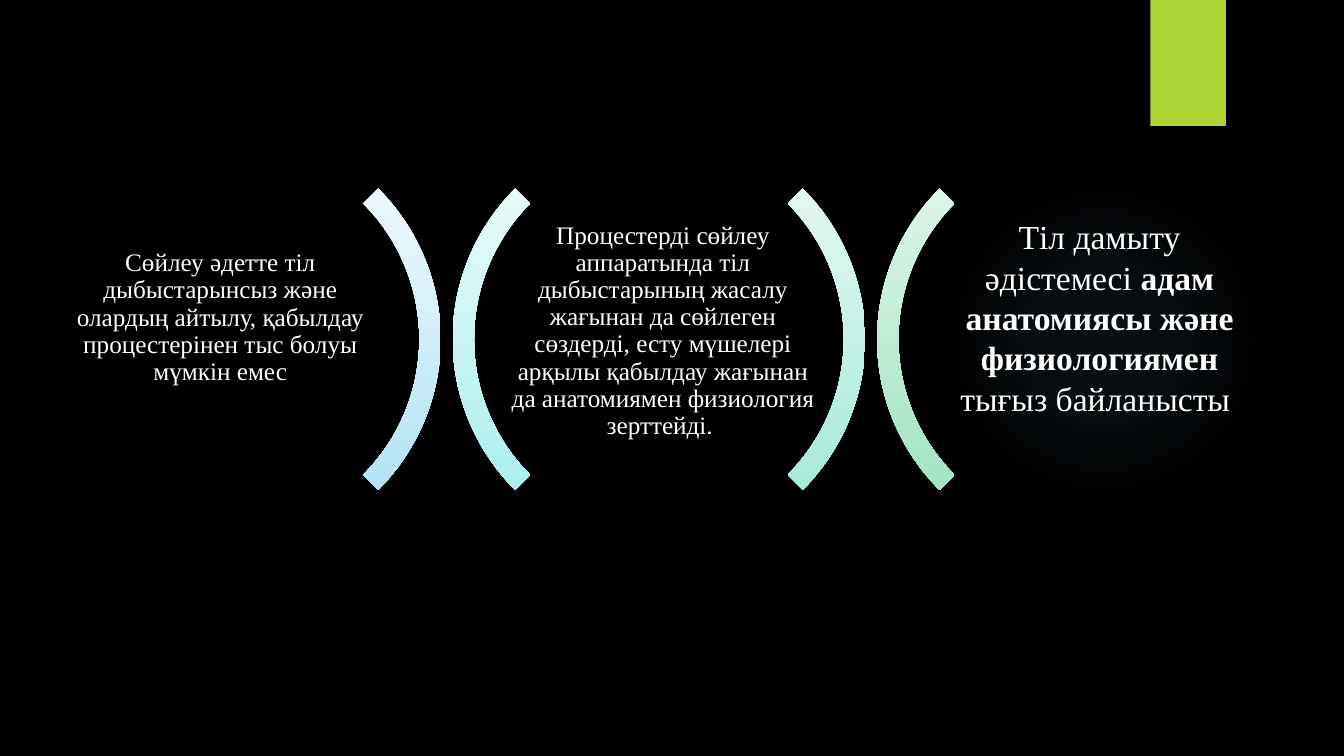
from lxml.etree import SubElement
from pptx import Presentation
from pptx.dml.color import RGBColor
from pptx.enum.shapes import MSO_SHAPE
from pptx.enum.text import MSO_ANCHOR, PP_ALIGN
from pptx.oxml.ns import qn
from pptx.util import Inches, Pt

BLACK = RGBColor(0x00, 0x00, 0x00)
WHITE = RGBColor(0xFF, 0xFF, 0xFF)
LIME = RGBColor(0xAC, 0xD4, 0x33)
SKY = RGBColor(0x7A, 0xC4, 0xF0)
FONT = "Times New Roman"

# Content: one entry per column, runs are (text, bold)
COLUMNS = [
    dict(box=(0.58, 2.73, 3.21, 0.85), size=18, spacing=0.9, inset=0.07, bottom=0.07,
         runs=[("Сөйлеу әдетте тіл дыбыстарынсыз және олардың айтылу, "
                "қабылдау процестерінен тыс болуы мүмкін емес", False)]),
    dict(box=(4.97, 2.86, 3.21, 0.85), size=18, spacing=0.9, inset=0.07, bottom=0.07,
         runs=[("Процестерді сөйлеу аппаратында тіл дыбыстарының жасалу жағынан "
                "да сөйлеген сөздерді, есту мүшелері арқылы қабылдау жағынан да "
                "анатомиямен физиология зерттейді. ", False)]),
    dict(box=(9.3, 2.34, 3.21, 2.11), size=24, spacing=1.0, inset=0.1, bottom=0.6,
         runs=[("Тіл дамыту әдістемесі ", False),
               ("адам анатомиясы және физиологиямен ", True),
               ("тығыз байланысты ", False)]),
]

# Each gap between columns holds a closing and an opening arc: (top, bottom) colours
ARC_PAIRS = [
    ((RGBColor(0xF9, 0xFC, 0xFE), RGBColor(0xA8, 0xDF, 0xF2)),
     (RGBColor(0xF3, 0xFC, 0xFC), RGBColor(0xA1, 0xED, 0xED))),
    ((RGBColor(0xEE, 0xFA, 0xF7), RGBColor(0x9B, 0xE8, 0xD5)),
     (RGBColor(0xE9, 0xF8, 0xF0), RGBColor(0x96, 0xE1, 0xBB))),
]
ARC_SIDES = [(0.14, 90), (4.49, 270)]  # first left edge, rotation
ARC_STEP, ARC_TOP, ARC_SIZE = 4.21, 1.25, 4.23


def add_plain_shape(slide, kind, box, color):
    shape = slide.shapes.add_shape(kind, *map(Inches, box))
    shape.shadow.inherit = False
    shape.fill.solid()
    shape.fill.fore_color.rgb = color
    shape.line.fill.background()
    return shape


def set_gradient(shape, stops, radial=False):
    """Replace the solid fill by a gradient that ignores the shape's rotation.

    Stops are (position %, colour, opacity %).
    """
    properties = shape._element.spPr
    solid = properties.find(qn("a:solidFill"))
    gradient = SubElement(properties, qn("a:gradFill"), rotWithShape="0")
    properties.replace(solid, gradient)
    stop_list = SubElement(gradient, qn("a:gsLst"))
    for position, color, opacity in stops:
        stop = SubElement(stop_list, qn("a:gs"), pos=str(position * 1000))
        color_element = SubElement(stop, qn("a:srgbClr"), val=str(color))
        if opacity < 100:
            SubElement(color_element, qn("a:alpha"), val=str(opacity * 1000))
    if radial:
        path = SubElement(gradient, qn("a:path"), path="circle")
        SubElement(path, qn("a:fillToRect"), l="50000", t="50000", r="50000", b="50000")
    else:
        SubElement(gradient, qn("a:lin"), ang="5400000", scaled="0")


def add_arc(slide, left, rotation, top_color, bottom_color):
    arc = add_plain_shape(slide, MSO_SHAPE.BLOCK_ARC,
                          (left, ARC_TOP, ARC_SIZE, ARC_SIZE), top_color)
    arc.rotation = rotation
    for index, value in enumerate((135, 189, 0.05)):
        arc.adjustments[index] = value
    set_gradient(arc, [(0, top_color, 100), (100, bottom_color, 100)])


def add_column(slide, column):
    frame = slide.shapes.add_textbox(*map(Inches, column["box"])).text_frame
    frame.word_wrap = True
    frame.vertical_anchor = MSO_ANCHOR.MIDDLE
    frame.margin_left = frame.margin_right = frame.margin_top = Inches(column["inset"])
    frame.margin_bottom = Inches(column["bottom"])
    paragraph = frame.paragraphs[0]
    paragraph.alignment = PP_ALIGN.CENTER
    paragraph.line_spacing = column["spacing"]
    for text, bold in column["runs"]:
        run = paragraph.add_run()
        run.text = text
        run.font.name = FONT
        run.font.size = Pt(column["size"])
        run.font.bold = bold
        run.font.color.rgb = WHITE


def main():
    presentation = Presentation()
    presentation.slide_width = Inches(13.33)
    presentation.slide_height = Inches(7.5)
    slide = presentation.slides.add_slide(presentation.slide_layouts[6])
    slide.background.fill.solid()
    slide.background.fill.fore_color.rgb = BLACK

    # Backdrop glow and corner tab
    glow = add_plain_shape(slide, MSO_SHAPE.OVAL, (9.41, 1.83, 3.08, 3.08), SKY)
    set_gradient(glow, [(0, SKY, 7), (36, SKY, 6), (69, SKY, 0)], radial=True)
    add_plain_shape(slide, MSO_SHAPE.RECTANGLE, (11.41, 0, 0.75, 1.25), LIME)

    # Arcs between the columns
    for gap, pair in enumerate(ARC_PAIRS):
        for (first_left, rotation), colors in zip(ARC_SIDES, pair):
            add_arc(slide, first_left + gap * ARC_STEP, rotation, *colors)

    # Column texts
    for column in COLUMNS:
        add_column(slide, column)

    presentation.save("out.pptx")


if __name__ == "__main__":
    main()
